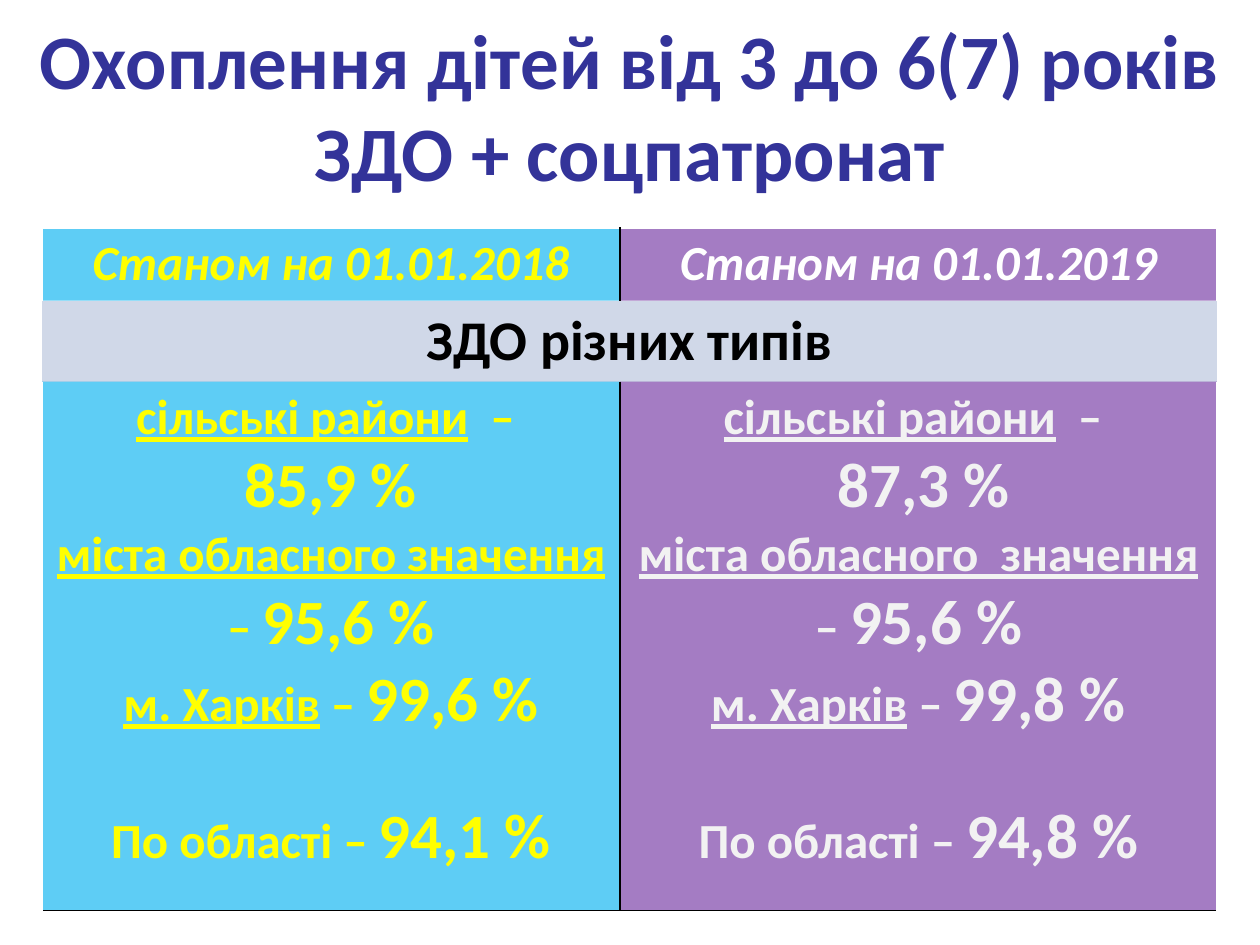
from lxml.etree import SubElement
from pptx import Presentation
from pptx.dml.color import RGBColor
from pptx.enum.text import MSO_ANCHOR, PP_ALIGN
from pptx.oxml.ns import qn
from pptx.util import Emu, Pt

# Content
TITLE = "Охоплення дітей від 3 до 6(7) років ЗДО + соцпатронат"
BAND = "ЗДО різних типів"
# Each line: (underlined label, plain text, value)
COLUMNS = [
    {"header": "Станом на 01.01.2018", "width": 578, "fill": "00B0F0",
     "header_color": "FFFF00", "text_color": "FFFF00",
     "borders": {"L": "FFFFFF", "R": "000000"},
     "lines": [("сільські райони", "  – ", ""),
               ("", "", "85,9 %"),
               ("міста обласного значення", " – ", "95,6 %"),
               ("м. Харків", " – ", "99,6 %"),
               ("", "По області – ", "94,1 %")]},
    {"header": "Станом на 01.01.2019", "width": 597, "fill": "7030A0",
     "header_color": "FFFFFF", "text_color": "F2F2F2",
     "borders": {"L": "000000", "R": "FFFFFF"},
     "lines": [("сільські райони", "  – ", ""),
               ("", " ", "87,3 %"),
               ("міста обласного  значення", " – ", "95,6 %"),
               ("м. Харків", " – ", "99,8 %"),
               ("", "По області – ", "94,8 %")]},
]
ROW_HEIGHTS = [72, 80, 529]
TABLE_LEFT, TABLE_TOP = 42, 228
FONT = "Calibri"
LABEL_SIZE, VALUE_SIZE = 28, 36
TOTAL_GAP = 34
FILL_OPACITY = 63
NO_STYLE = "{2D5ABB26-0587-4C30-8999-92F81FD0307C}"


def px(length):
    return Emu(round(length * 914400 / 126))


def color(value):
    return RGBColor.from_string(value)


def add_run(paragraph, text, size, text_color, italic=False, underline=False):
    paragraph.alignment = PP_ALIGN.CENTER
    run = paragraph.add_run()
    run.text = text
    font = run.font
    font.name, font.size, font.bold = FONT, Pt(size), True
    font.italic, font.underline = italic, underline
    font.color.rgb = color(text_color)


def fill_cell(cell, value, opacity=100):
    cell.fill.solid()
    cell.fill.fore_color.rgb = color(value)
    if opacity < 100:
        tint = cell._tc.tcPr.find(".//" + qn("a:srgbClr"))
        SubElement(tint, qn("a:alpha"), val=str(opacity * 1000))


def set_borders(cell, borders):
    properties = cell._tc.get_or_add_tcPr()
    sides = [side for side in "LRTB" if side in borders]
    for index, side in enumerate(sides):
        line = SubElement(properties, qn("a:ln" + side), w=str(Pt(1)))
        solid = SubElement(line, qn("a:solidFill"))
        SubElement(solid, qn("a:srgbClr"), val=borders[side])
        properties.insert(index, line)


presentation = Presentation()
presentation.slide_width, presentation.slide_height = px(1260), px(945)
slide = presentation.slides.add_slide(presentation.slide_layouts[5])

# Title
title = slide.shapes.title
title.left, title.top, title.width, title.height = px(21), px(21), px(1218), px(168)
title.text_frame.word_wrap = True
title.text_frame.vertical_anchor = MSO_ANCHOR.MIDDLE
add_run(title.text_frame.paragraphs[0], TITLE, 44, "333399")

# Table grid
frame = slide.shapes.add_table(
    len(ROW_HEIGHTS), len(COLUMNS), px(TABLE_LEFT), px(TABLE_TOP),
    px(sum(column["width"] for column in COLUMNS)), px(sum(ROW_HEIGHTS)))
table = frame.table
table.first_row = table.horz_banding = False
table._tbl.tblPr.find(qn("a:tableStyleId")).text = NO_STYLE
for row, height in zip(table.rows, ROW_HEIGHTS):
    row.height = px(height)

# Year columns: header and figures
for index, column in enumerate(COLUMNS):
    table.columns[index].width = px(column["width"])
    header, body = table.cell(0, index), table.cell(2, index)
    for cell, edge in ((header, {"T": "FFFFFF"}), (body, {"B": "000000"})):
        fill_cell(cell, column["fill"], FILL_OPACITY)
        set_borders(cell, column["borders"] | edge)

    header.vertical_anchor = MSO_ANCHOR.MIDDLE
    add_run(header.text_frame.paragraphs[0], column["header"], LABEL_SIZE,
            column["header_color"], italic=True)

    text_frame = body.text_frame
    for number, (label, plain, value) in enumerate(column["lines"]):
        paragraph = text_frame.add_paragraph() if number else text_frame.paragraphs[0]
        for text, size, underline in ((label, LABEL_SIZE, True),
                                      (plain, LABEL_SIZE, False),
                                      (value, VALUE_SIZE, False)):
            if text:
                add_run(paragraph, text, size, column["text_color"], underline=underline)
    paragraph.space_before = Pt(TOTAL_GAP)

# Band across both columns
band = table.cell(1, 0)
band.merge(table.cell(1, 1))
band.vertical_anchor = MSO_ANCHOR.MIDDLE
fill_cell(band, "D0D8E8")
add_run(band.text_frame.paragraphs[0], BAND, 32, "000000")

presentation.save("out.pptx")
